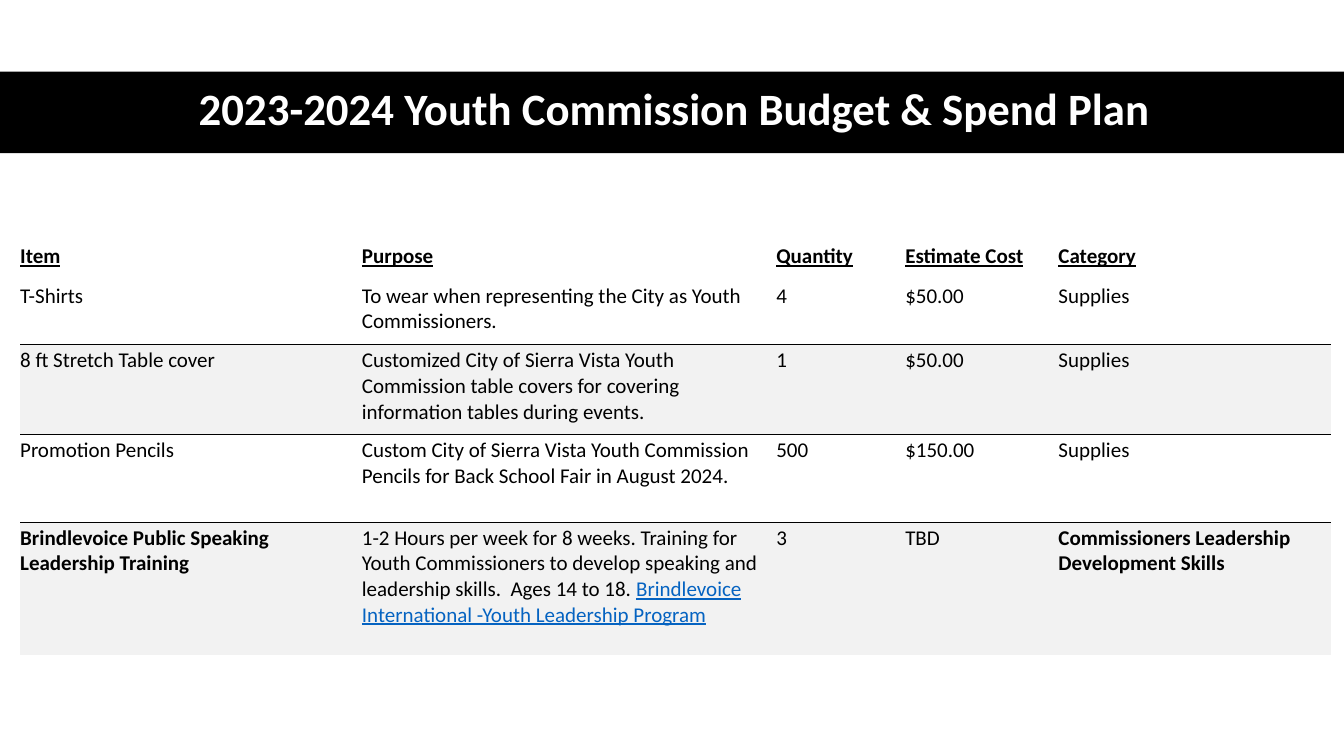
import dataclasses

import lxml.etree
import pptx
import pptx.dml.color
import pptx.enum.shapes
import pptx.enum.text
import pptx.oxml.ns
import pptx.util

SLIDE_WIDTH = pptx.util.Inches(13.33)
SLIDE_HEIGHT = pptx.util.Inches(7.5)
BLACK = "000000"
WHITE = "FFFFFF"
SHADE = "F2F2F2"
LINK_BLUE = "0563C1"
FONT_NAME = "Calibri"
NO_GRID_STYLE = "{2D5ABB26-0587-4C30-8999-92F81FD0307C}"

COLUMN_SHARES = (25.43, 30.83, 9.6, 11.4, 20.25)
HEADINGS = ("Item", "Purpose", "Quantity", "Estimate Cost", "Category")


@dataclasses.dataclass(frozen=True)
class BudgetLine:
    values: tuple[str, ...]
    height_share: float
    shaded: bool = False
    bold_columns: tuple[int, ...] = ()
    linked_purpose: str = ""
    heading: bool = False


BUDGET = (
    BudgetLine(HEADINGS, 10.4, bold_columns=(0, 1, 2, 3, 4), heading=True),
    BudgetLine(
        ("T-Shirts", "To wear when representing the City as Youth Commissioners.",
         "4", "$50.00", "Supplies"),
        8.53,
    ),
    BudgetLine(
        ("8 ft Stretch Table cover",
         "Customized City of Sierra Vista Youth Commission table covers for "
         "covering information tables during events.",
         "1", "$50.00", "Supplies"),
        11.6, shaded=True,
    ),
    BudgetLine(
        ("Promotion Pencils",
         "Custom City of Sierra Vista Youth Commission Pencils for Back School "
         "Fair in August 2024.",
         "500", "$150.00", "Supplies"),
        11.6,
    ),
    BudgetLine(
        ("Brindlevoice Public Speaking\nLeadership Training",
         "1-2 Hours per week for 8 weeks. Training for Youth Commissioners to "
         "develop speaking and leadership skills.  Ages 14 to 18. ",
         "3", "TBD", "Commissioners Leadership Development Skills"),
        17.6, shaded=True, bold_columns=(0, 4),
        linked_purpose="Brindlevoice International -Youth Leadership Program",
    ),
)


def across(percent: float) -> int:
    return round(SLIDE_WIDTH * percent / 100)


def down(percent: float) -> int:
    return round(SLIDE_HEIGHT * percent / 100)


def color(value: str) -> pptx.dml.color.RGBColor:
    return pptx.dml.color.RGBColor.from_string(value)


def style_font(font, size: float, value: str, bold: bool) -> None:
    font.name = FONT_NAME
    font.size = pptx.util.Pt(size)
    font.bold = bold
    font.color.rgb = color(value)


def add_title(slide) -> None:
    band = slide.shapes.add_shape(
        pptx.enum.shapes.MSO_SHAPE.RECTANGLE, 0, down(9.47), SLIDE_WIDTH, down(10.8)
    )
    band.shadow.inherit = False
    band.fill.solid()
    band.fill.fore_color.rgb = color(BLACK)
    band.line.fill.background()

    title = slide.shapes.add_textbox(across(4.58), down(9.33), across(91.97), down(10.8))
    frame = title.text_frame
    frame.word_wrap = True
    frame.vertical_anchor = pptx.enum.text.MSO_ANCHOR.MIDDLE
    paragraph = frame.paragraphs[0]
    paragraph.text = "2023-2024 Youth Commission Budget & Spend Plan "
    paragraph.alignment = pptx.enum.text.PP_ALIGN.CENTER
    paragraph.line_spacing = 0.9
    style_font(paragraph.font, 32, WHITE, True)


def add_border(cell, side: str) -> None:
    properties = cell._tc.get_or_add_tcPr()
    line = lxml.etree.Element(
        pptx.oxml.ns.qn(f"a:{side}"), w=str(pptx.util.Pt(0.75))
    )
    fill = lxml.etree.SubElement(line, pptx.oxml.ns.qn("a:solidFill"))
    lxml.etree.SubElement(fill, pptx.oxml.ns.qn("a:srgbClr"), val=BLACK)
    properties.insert(0, line)


def fill_cell(cell, budget_line: BudgetLine, column: int) -> None:
    anchors = pptx.enum.text.MSO_ANCHOR
    cell.vertical_anchor = anchors.BOTTOM if budget_line.heading else anchors.TOP
    cell.margin_left = 0
    cell.margin_top = pptx.util.Inches(0.02 if budget_line.heading else 0.03)
    cell.margin_right = pptx.util.Inches(0.09)
    cell.margin_bottom = pptx.util.Inches(0.11)
    cell.text_frame.text = budget_line.values[column]
    for paragraph in cell.text_frame.paragraphs:
        style_font(paragraph.font, 15, BLACK, column in budget_line.bold_columns)
        paragraph.font.underline = budget_line.heading

    if budget_line.shaded:
        cell.fill.solid()
        cell.fill.fore_color.rgb = color(SHADE)
        add_border(cell, "lnT")
    else:
        cell.fill.background()
        if not budget_line.heading:
            add_border(cell, "lnB")


def add_budget_table(slide) -> None:
    frame = slide.shapes.add_table(
        len(BUDGET), len(HEADINGS), across(1.5), down(26.67),
        across(sum(COLUMN_SHARES)), down(sum(line.height_share for line in BUDGET)),
    )
    table = frame.table
    table.first_row = False
    table.horz_banding = False
    next(frame.element.iter(pptx.oxml.ns.qn("a:tableStyleId"))).text = NO_GRID_STYLE

    for column, share in zip(table.columns, COLUMN_SHARES):
        column.width = across(share)
    for row, budget_line in zip(table.rows, BUDGET):
        row.height = down(budget_line.height_share)
        for column, cell in enumerate(row.cells):
            fill_cell(cell, budget_line, column)
        if budget_line.linked_purpose:
            purpose = row.cells[HEADINGS.index("Purpose")]
            run = purpose.text_frame.paragraphs[0].add_run()
            run.text = budget_line.linked_purpose
            run.font.color.rgb = color(LINK_BLUE)
            run.font.underline = True


def main() -> None:
    presentation = pptx.Presentation()
    presentation.slide_width = SLIDE_WIDTH
    presentation.slide_height = SLIDE_HEIGHT
    slide = presentation.slides.add_slide(presentation.slide_layouts[6])
    add_title(slide)
    add_budget_table(slide)
    presentation.save("out.pptx")


if __name__ == "__main__":
    main()
